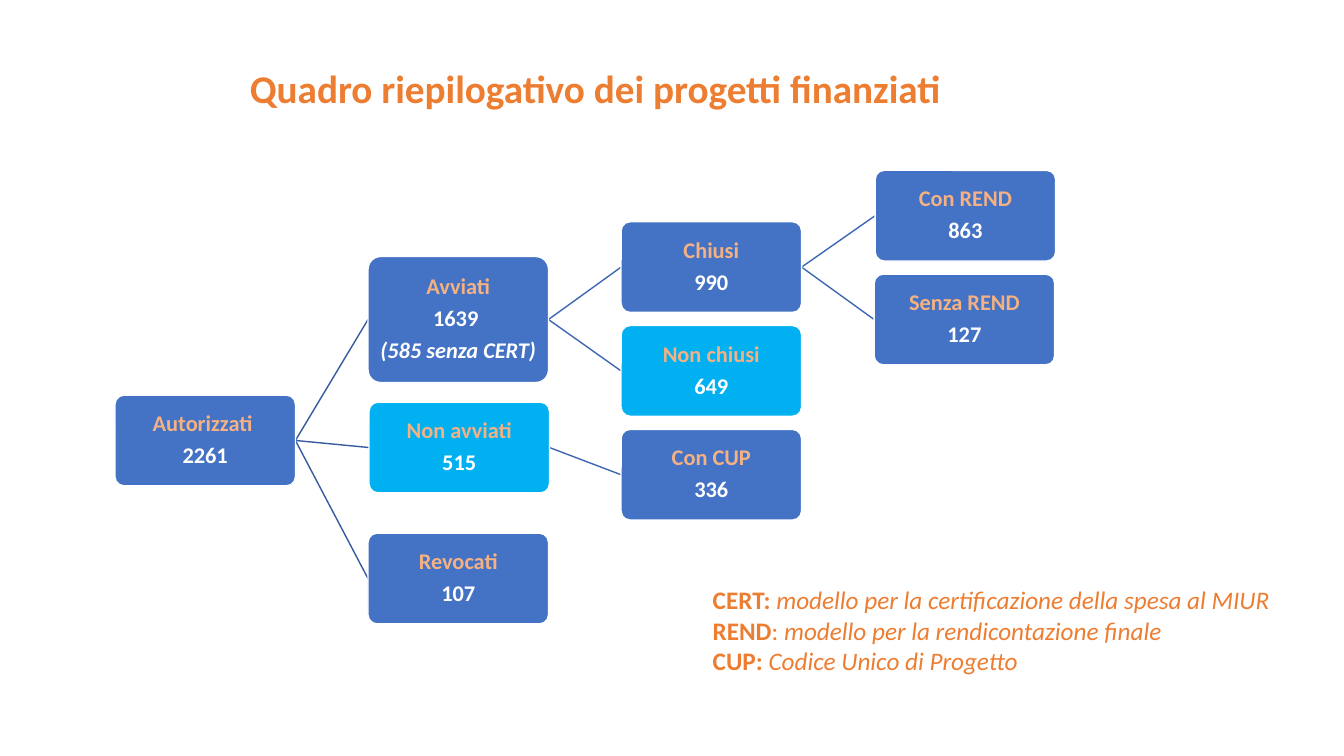
from lxml import etree
from pptx import Presentation
from pptx.dml.color import RGBColor
from pptx.enum.shapes import MSO_CONNECTOR, MSO_SHAPE
from pptx.enum.text import MSO_ANCHOR, PP_ALIGN
from pptx.oxml.ns import qn
from pptx.util import Inches, Pt

STRAIGHT = MSO_CONNECTOR.STRAIGHT
ROUNDED = MSO_SHAPE.ROUNDED_RECTANGLE
MIDDLE = MSO_ANCHOR.MIDDLE
CENTER = PP_ALIGN.CENTER

FONT = "Calibri"
COLORS = {
    "blue": "4472C4",
    "cyan": "00B0F0",
    "white": "FFFFFF",
    "peach": "F4B183",
    "orange": "ED7D31",
    "root_line": "365B9D",
    "branch_line": "3E67B2",
}

TITLE = "Quadro riepilogativo dei progetti finanziati"
# name: (label, value, note, left, vertical centre, fill)
NODES = {
    "authorized": ("Autorizzati ", "2261", "", 1.14, 4.37, "blue"),
    "started": ("Avviati", "1639 ", "(585 senza CERT)", 3.65, 3.17, "blue"),
    "not_started": ("Non avviati", "515", "", 3.66, 4.44, "cyan"),
    "revoked": ("Revocati", "107", "", 3.65, 5.74, "blue"),
    "closed": ("Chiusi", "990", "", 6.16, 2.65, "blue"),
    "not_closed": ("Non chiusi", "649", "", 6.16, 3.68, "cyan"),
    "with_cup": ("Con CUP", "336", "", 6.16, 4.71, "blue"),
    "with_rend": ("Con REND", "863", "", 8.68, 2.14, "blue"),
    "without_rend": ("Senza REND", "127", "", 8.67, 3.17, "blue"),
}
BRANCHES = {
    "authorized": ["started", "not_started", "revoked"],
    "started": ["closed", "not_closed"],
    "not_started": ["with_cup"],
    "closed": ["with_rend", "without_rend"],
}
# each line: (text, format) spans
LEGEND = [
    [("CERT: ", {"bold": True}),
     ("modello per la certificazione della spesa al MIUR", {"italic": True})],
    [("REND", {"bold": True}), (": ", {}),
     ("modello per la rendicontazione finale", {"italic": True})],
    [("CUP: ", {"bold": True}), ("Codice Unico di Progetto", {"italic": True})],
]

NODE_WIDTH = 1.79
NODE_HEIGHT = 0.9
NOTED_HEIGHT = 1.25
NODE_INSET = Inches(0.04)


def rgb(name):
    return RGBColor.from_string(COLORS[name])


def add_span(para, text, size=16, color="orange", bold=False, italic=False):
    span = para.add_run()
    span.text = text
    font = span.font
    font.name, font.size = FONT, Pt(size)
    font.bold, font.italic = bold, italic
    font.color.rgb = rgb(color)


def add_lines(frame, lines, **paragraph_format):
    """Write lines of (text, format) spans, one paragraph each."""
    for index, spans in enumerate(lines):
        para = frame.paragraphs[0] if index == 0 else frame.add_paragraph()
        for name, value in paragraph_format.items():
            setattr(para, name, value)
        for text, text_format in spans:
            add_span(para, text, **text_format)


def add_text_box(page, left, top, width, height, lines):
    box = page.shapes.add_textbox(*map(Inches, (left, top, width, height)))
    box.text_frame.word_wrap = True
    add_lines(box.text_frame, lines)


def add_branch(page, parent, child):
    parent_left, parent_middle = NODES[parent][3:5]
    child_left, child_middle = NODES[child][3:5]
    ends = (parent_left + NODE_WIDTH, parent_middle, child_left, child_middle)
    branch = page.shapes.add_connector(STRAIGHT, *map(Inches, ends))
    branch.line.width = Pt(1)
    branch.line.color.rgb = rgb("root_line" if parent == "authorized" else "branch_line")
    etree.SubElement(branch._element.spPr, qn("a:effectLst"))


def add_node(page, label, value, note, left, middle, fill):
    height = NOTED_HEIGHT if note else NODE_HEIGHT
    area = (left, middle - height / 2, NODE_WIDTH, height)
    box = page.shapes.add_shape(ROUNDED, *map(Inches, area))
    box.adjustments[0] = 0.1
    box.shadow.inherit = False
    box.fill.solid()
    box.fill.fore_color.rgb = rgb(fill)
    box.line.color.rgb = rgb("white")
    box.line.width = Pt(1)

    frame = box.text_frame
    frame.word_wrap = True
    frame.vertical_anchor = MIDDLE
    frame.margin_left = frame.margin_right = NODE_INSET
    frame.margin_top = frame.margin_bottom = NODE_INSET
    lines = [[(label, {"color": "peach", "bold": True})],
             [(value, {"color": "white", "bold": True})]]
    if note:
        lines.append([(note, {"color": "white", "bold": True, "italic": True})])
    add_lines(frame, lines, alignment=CENTER, line_spacing=0.9, space_after=Pt(5.6))


def main():
    deck = Presentation()
    deck.slide_width, deck.slide_height = Inches(13.33), Inches(7.5)
    page = deck.slides.add_slide(deck.slide_layouts[6])

    for parent, children in BRANCHES.items():
        for child in children:
            add_branch(page, parent, child)
    for node in NODES.values():
        add_node(page, *node)

    add_text_box(page, 2.38, 0.59, 7.29, 0.57, [[(TITLE, {"size": 28, "bold": True})]])
    legend = [[(text, {"size": 18, **look}) for text, look in line] for line in LEGEND]
    add_text_box(page, 6.97, 5.75, 5.89, 1.01, legend)
    deck.save("out.pptx")


if __name__ == "__main__":
    main()
